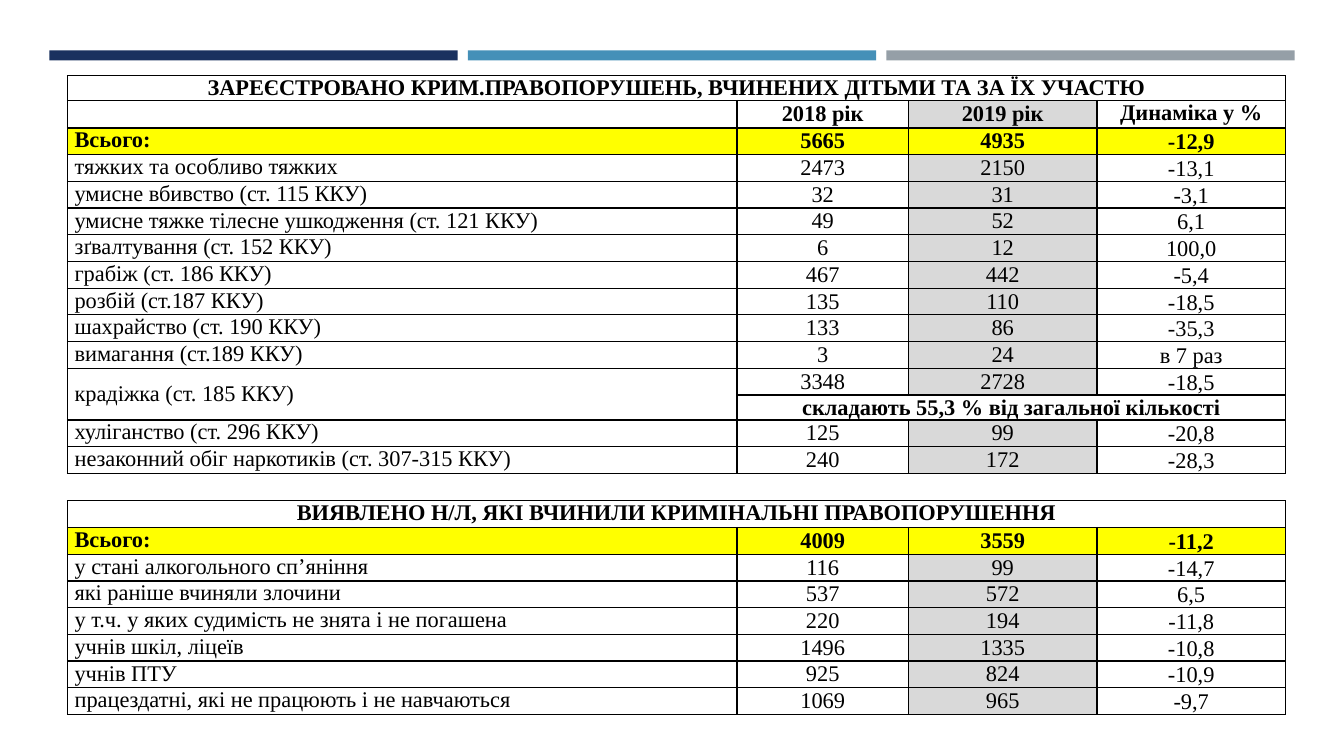
import dataclasses

import pptx
import pptx.dml.color
import pptx.enum.shapes
import pptx.enum.text
import pptx.oxml
import pptx.oxml.ns
import pptx.util
from pptx.util import Inches

Align = pptx.enum.text.PP_ALIGN
Anchor = pptx.enum.text.MSO_ANCHOR


@dataclasses.dataclass(frozen=True)
class Theme:
    font: str = "Times New Roman"
    size: int = 16
    border: int = 1
    ink: str = "000000"
    total: str = "FFFF00"
    current_year: str = "D9D9D9"
    bars: tuple = ("1A315F", "4590B8", "959FA7")


CRIMES = [
    ("ЗАРЕЄСТРОВАНО КРИМ.ПРАВОПОРУШЕНЬ, ВЧИНЕНИХ ДІТЬМИ ТА ЗА ЇХ УЧАСТЮ",),
    ("", "2018 рік", "2019 рік", "Динаміка у %"),
    ("Всього:", "5665", "4935", "-12,9"),
    ("тяжких та особливо тяжких", "2473", "2150", "-13,1"),
    ("умисне вбивство (ст. 115 ККУ)", "32", "31", "-3,1"),
    ("умисне тяжке тілесне ушкодження (ст. 121 ККУ)", "49", "52", "6,1"),
    ("зґвалтування (ст. 152 ККУ)", "6", "12", "100,0"),
    ("грабіж (ст. 186 ККУ)", "467", "442", "-5,4"),
    ("розбій (ст.187 ККУ)", "135", "110", "-18,5"),
    ("шахрайство (ст. 190 ККУ)", "133", "86", "-35,3"),
    ("вимагання (ст.189 ККУ)", "3", "24", "в 7 раз"),
    ("крадіжка (ст. 185 ККУ)", "3348", "2728", "-18,5"),
    ("", "складають 55,3 % від загальної кількості"),
    ("хуліганство (ст. 296 ККУ)", "125", "99", "-20,8"),
    ("незаконний обіг наркотиків (ст. 307-315 ККУ)", "240", "172", "-28,3"),
]
OFFENDERS = [
    ("ВИЯВЛЕНО Н/Л, ЯКІ ВЧИНИЛИ КРИМІНАЛЬНІ ПРАВОПОРУШЕННЯ",),
    ("Всього:", "4009", "3559", "-11,2"),
    ("у стані алкогольного сп’яніння", "116", "99", "-14,7"),
    ("які раніше вчиняли злочини", "537", "572", "6,5"),
    ("у т.ч. у яких судимість не знята і не погашена", "220", "194", "-11,8"),
    ("учнів шкіл, ліцеїв", "1496", "1335", "-10,8"),
    ("учнів ПТУ", "925", "824", "-10,9"),
    ("працездатні, які не працюють і не навчаються", "1069", "965", "-9,7"),
]
ROWS = CRIMES + [("",)] + OFFENDERS
HEADER = 1
SPACER = len(CRIMES)
NOTE = next(i for i, row in enumerate(ROWS) if len(row) == 2)
THEFT = NOTE - 1
COLUMNS = (6.64, 1.7, 1.87, 1.87)
TABLE_HEIGHT = 6.31
SHORT_ROW = 0.24
ROW_HEIGHT = (TABLE_HEIGHT - 2 * SHORT_ROW) / (len(ROWS) - 2)


def apply(target, values):
    for name, value in values.items():
        setattr(target, name, value)


@dataclasses.dataclass
class Builder:
    theme: Theme
    page: object

    def bar(self, left, top, width, height, color):
        box = self.page.shapes.add_shape(
            pptx.enum.shapes.MSO_SHAPE.RECTANGLE,
            Inches(left), Inches(top), Inches(width), Inches(height))
        box.shadow.inherit = False
        box.line.fill.background()
        self.fill(box, color)

    def fill(self, target, color):
        if color is None:
            target.fill.background()
            return
        target.fill.solid()
        target.fill.fore_color.rgb = pptx.dml.color.RGBColor.from_string(color)

    def borders(self, cell, visible):
        properties = cell._tc.get_or_add_tcPr()
        namespace = pptx.oxml.ns.nsdecls("a")
        width = pptx.util.Pt(self.theme.border)
        solid = f'<a:solidFill><a:srgbClr val="{self.theme.ink}"/></a:solidFill>'
        for side in "LRTB":
            paint = solid if side in visible else "<a:noFill/>"
            properties.append(pptx.oxml.parse_xml(
                f'<a:ln{side} {namespace} w="{width}">{paint}</a:ln{side}>'))

    def cell(self, cell, text, align, anchor, bold, color, visible):
        apply(cell, {
            "margin_left": Inches(0.07), "margin_right": Inches(0.07),
            "margin_top": 0, "margin_bottom": 0, "vertical_anchor": anchor})
        self.borders(cell, visible)
        self.fill(cell, color)
        para = cell.text_frame.paragraphs[0]
        para.alignment = align
        if not text:
            para._p.get_or_add_endParaRPr().set("sz", str(self.theme.size * 100))
            return
        span = para.add_run()
        span.text = text
        apply(span.font, {
            "name": self.theme.font, "size": pptx.util.Pt(self.theme.size),
            "bold": bold})
        span.font.color.rgb = pptx.dml.color.RGBColor.from_string(self.theme.ink)

    def table(self, left, top):
        table = self.page.shapes.add_table(
            len(ROWS), len(COLUMNS), Inches(left), Inches(top),
            Inches(sum(COLUMNS)), Inches(TABLE_HEIGHT)).table
        apply(table, {"first_row": False, "horz_banding": False})
        for column, width in zip(table.columns, COLUMNS):
            column.width = Inches(width)
        for i, row in enumerate(ROWS):
            table.rows[i].height = Inches(SHORT_ROW if i in (0, NOTE) else ROW_HEIGHT)
            self.row(table, i, row)
        table.cell(THEFT, 0).merge(table.cell(NOTE, 0))

    def row(self, table, i, row):
        full = len(row) == len(COLUMNS)
        total = row[0] == "Всього:"
        last = len(COLUMNS) - 1
        for j in range(len(COLUMNS)):
            text = row[j] if j < len(row) else ""
            color = self.theme.total if total else None
            if full and j == 2 and not total:
                color = self.theme.current_year
            anchor = (Anchor.TOP, Anchor.MIDDLE, Anchor.MIDDLE, Anchor.BOTTOM)[j]
            if (i, j) == (HEADER, last):
                anchor = Anchor.TOP
            elif (i, j) == (THEFT, 0):
                anchor = Anchor.MIDDLE
            elif i == NOTE:
                anchor = Anchor.BOTTOM
            align = Align.LEFT if j == 0 and len(row) > 1 else Align.CENTER
            self.cell(table.cell(i, j), text, align, anchor,
                      total or not full or i == HEADER, color,
                      "TB" if i == SPACER else "LRTB")
        if not full:
            table.cell(i, len(row) - 1).merge(table.cell(i, last))


def main():
    deck = pptx.Presentation()
    apply(deck, {"slide_width": Inches(13.33), "slide_height": Inches(7.5)})
    theme = Theme()
    builder = Builder(theme, deck.slides.add_slide(deck.slide_layouts[6]))
    for i, color in enumerate(theme.bars):
        builder.bar(0.49 + 4.15 * i, 0.5, 4.05, 0.1, color)
    builder.table(0.67, 0.75)
    deck.save("out.pptx")


if __name__ == "__main__":
    main()
